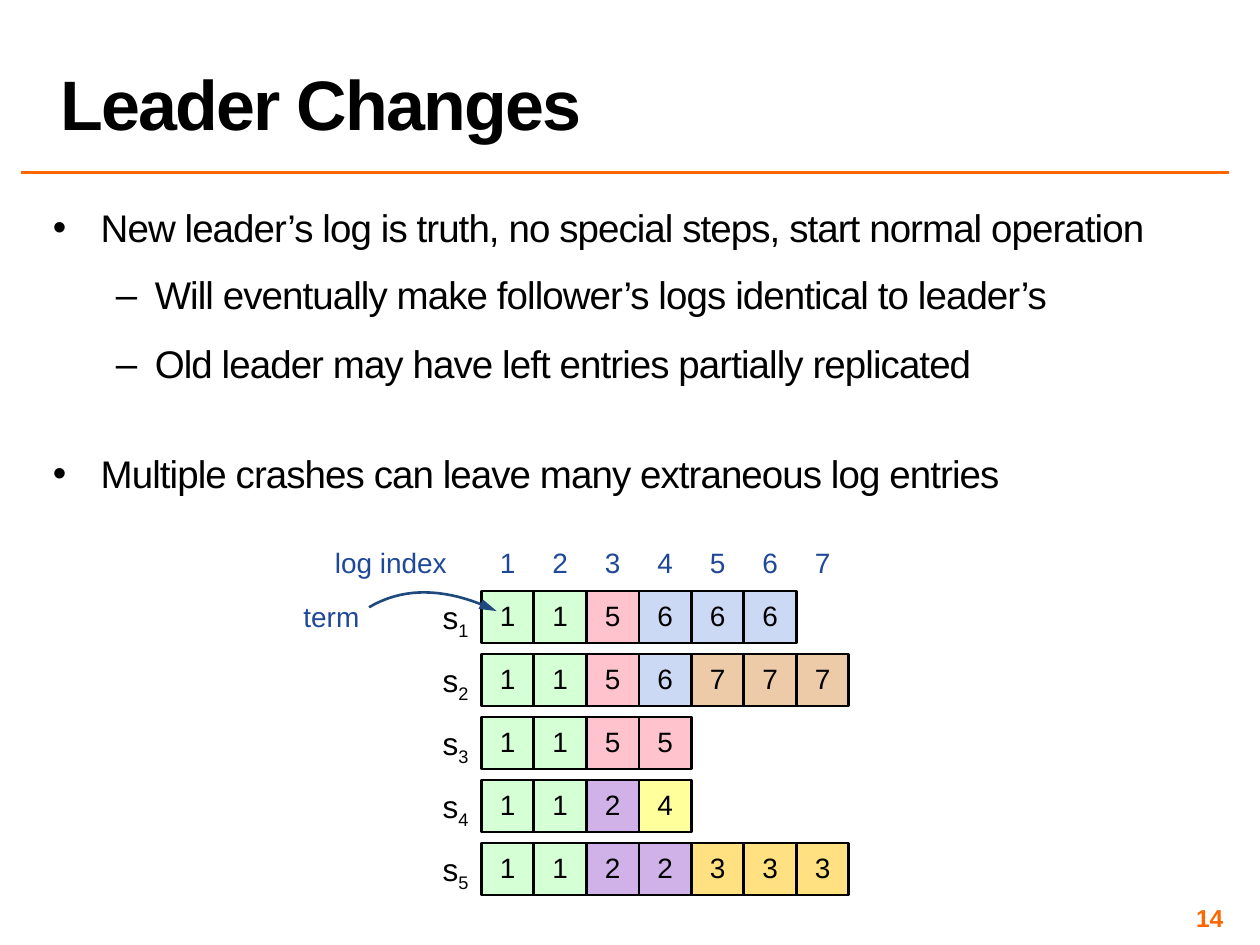
from dataclasses import dataclass

from lxml.etree import SubElement
from pptx import Presentation
from pptx.dml.color import RGBColor as Color
from pptx.enum.shapes import MSO_CONNECTOR as Connector, MSO_SHAPE as Preset
from pptx.enum.text import MSO_ANCHOR as Anchor, PP_ALIGN as Align
from pptx.oxml.ns import qn
from pptx.util import Inches, Pt


@dataclass(frozen=True)
class Theme:
    font: str = "Arial"
    ink: str = "000000"
    accent: str = "FF6600"
    label: str = "1F4899"
    arrow: str = "1F497D"
    title_size: int = 40
    body_size: int = 22
    server_size: int = 18
    log_size: int = 16
    number_size: int = 14
    terms: tuple = ("D5FFD5", "D1B2E8", "FFE181", "FFFF9B", "FFC3CE", "CCD9F4", "EECBA8")


theme = Theme()
deck = Presentation()
deck.slide_width, deck.slide_height = Inches(10), Inches(7.5)
page = deck.slides.add_slide(deck.slide_layouts[6])
column, row = deck.slide_width / 24, deck.slide_height / 15


def add_box(left, top, width, height, inset=0.0, anchor=Anchor.TOP, preset=None):
    place = [int(left * column), int(top * row), int(width * column), int(height * row)]
    box = page.shapes.add_shape(preset, *place) if preset else page.shapes.add_textbox(*place)
    frame = box.text_frame
    frame.word_wrap = True
    frame.vertical_anchor = anchor
    frame.margin_left = frame.margin_right = Inches(inset)
    frame.margin_top = frame.margin_bottom = Inches(inset)
    return box


def add_span(para, text, size, color=theme.ink, bold=False, spacing=0, baseline=0):
    span = para.add_run()
    span.text = text
    span.font.name, span.font.size, span.font.bold = theme.font, Pt(size), bold
    span.font.color.rgb = Color.from_string(color)
    for name, value in (("spc", spacing * 100), ("baseline", baseline * 1000)):
        if value:
            span.font._element.set(name, str(int(value)))


rule = page.shapes.add_connector(
    Connector.STRAIGHT, int(0.41 * column), int(2.74 * row), int(23.4 * column), int(2.74 * row))
rule.line.color.rgb = Color.from_string(theme.accent)
rule.line.width = Pt(2)
SubElement(rule._element.spPr, qn("a:effectLst"))

points = [
    ("New leader’s log is truth, no special steps, start normal operation", 0, 6),
    ("Will eventually make follower’s logs identical to leader’s", 1, 8),
    ("Old leader may have left entries partially replicated", 1, 8),
    ("Multiple crashes can leave many extraneous log entries", 0, 30),
]
levels = [(0.38, -0.38, 1.0, "•"), (0.81, -0.31, 0.95, "–")]
body = add_box(0.91, 3.16, 23.02, 10.74, 0.04).text_frame
for order, (text, level, before) in enumerate(points):
    para = body.add_paragraph() if order else body.paragraphs[0]
    margin, indent, leading, mark = levels[level]
    para.level, para.line_spacing = level, leading
    para.space_before, para.space_after = Pt(before), Pt(6)
    settings = para._p.get_or_add_pPr()
    settings.set("marL", str(Inches(margin)))
    settings.set("indent", str(Inches(indent)))
    SubElement(settings, qn("a:buFont"), typeface=theme.font)
    SubElement(settings, qn("a:buChar"), char=mark)
    add_span(para, text, theme.body_size, spacing=-0.5)

para = add_box(17.81, 14.34, 5.59, 0.46, 0.04, Anchor.MIDDLE).text_frame.paragraphs[0]
para.alignment = Align.RIGHT
add_span(para, "14", theme.number_size, theme.accent, bold=True)

title = add_box(0.91, 0.04, 22.49, 2.34, 0.05, Anchor.BOTTOM).text_frame
title.margin_left = title.margin_right = Inches(0.1)
title.paragraphs[0].line_spacing = 0.8
add_span(title.paragraphs[0], "Leader Changes", theme.title_size, bold=True, spacing=-1)

logs = ["111"[:2] + "5666", "1156777", "1155", "1124", "1122333"]
logs[0] = "115666"
log_left, log_top = 9.17, 9.38

for index in range(7):
    para = add_box(log_left + index, 8.56, 1, 0.74, 0.05).text_frame.paragraphs[0]
    para.alignment = Align.CENTER
    add_span(para, str(index + 1), theme.log_size, theme.label)

for text, left, top, width in (("log index", 6.38, 8.66, 3), ("term", 5.78, 9.52, 2)):
    para = add_box(left, top, width, 0.54).text_frame.paragraphs[0]
    add_span(para, text, theme.log_size, theme.label)

for server, log in enumerate(logs):
    para = add_box(log_left - 0.99, log_top + 0.12 + server, 1, 0.6).text_frame.paragraphs[0]
    para.alignment = Align.CENTER
    add_span(para, "s", theme.server_size)
    add_span(para, str(server + 1), theme.server_size, baseline=-25)
    for index, term in enumerate(log):
        entry = add_box(log_left + index, log_top + server, 1, 0.83,
                        anchor=Anchor.MIDDLE, preset=Preset.RECTANGLE)
        entry.shadow.inherit = False
        entry.fill.solid()
        entry.fill.fore_color.rgb = Color.from_string(theme.terms[int(term) - 1])
        entry.line.color.rgb = Color.from_string(theme.ink)
        entry.line.width = Pt(1.5)
        para = entry.text_frame.paragraphs[0]
        para.alignment, para.line_spacing = Align.CENTER, Pt(17)
        add_span(para, term, theme.log_size)

bends = [(7.03, 9.64), (7.8, 9.26), (8.66, 9.38), (9.46, 9.7)]
steps = 20
curve = []
for step in range(steps + 1):
    t = step / steps
    weights = ((1 - t) ** 3, 3 * t * (1 - t) ** 2, 3 * t * t * (1 - t), t ** 3)
    curve.append((
        int(sum(weight * x for weight, (x, y) in zip(weights, bends)) * column),
        int(sum(weight * y for weight, (x, y) in zip(weights, bends)) * row)))
outline = page.shapes.build_freeform(*curve[0])
outline.add_line_segments(curve[1:], close=False)
arrow = outline.convert_to_shape()
arrow.shadow.inherit = False
arrow.fill.background()
arrow.line.color.rgb = Color.from_string(theme.arrow)
arrow.line.width = Pt(1.5)
SubElement(arrow.line._get_or_add_ln(), qn("a:tailEnd"), type="triangle", w="med", len="lg")

deck.save("out.pptx")
